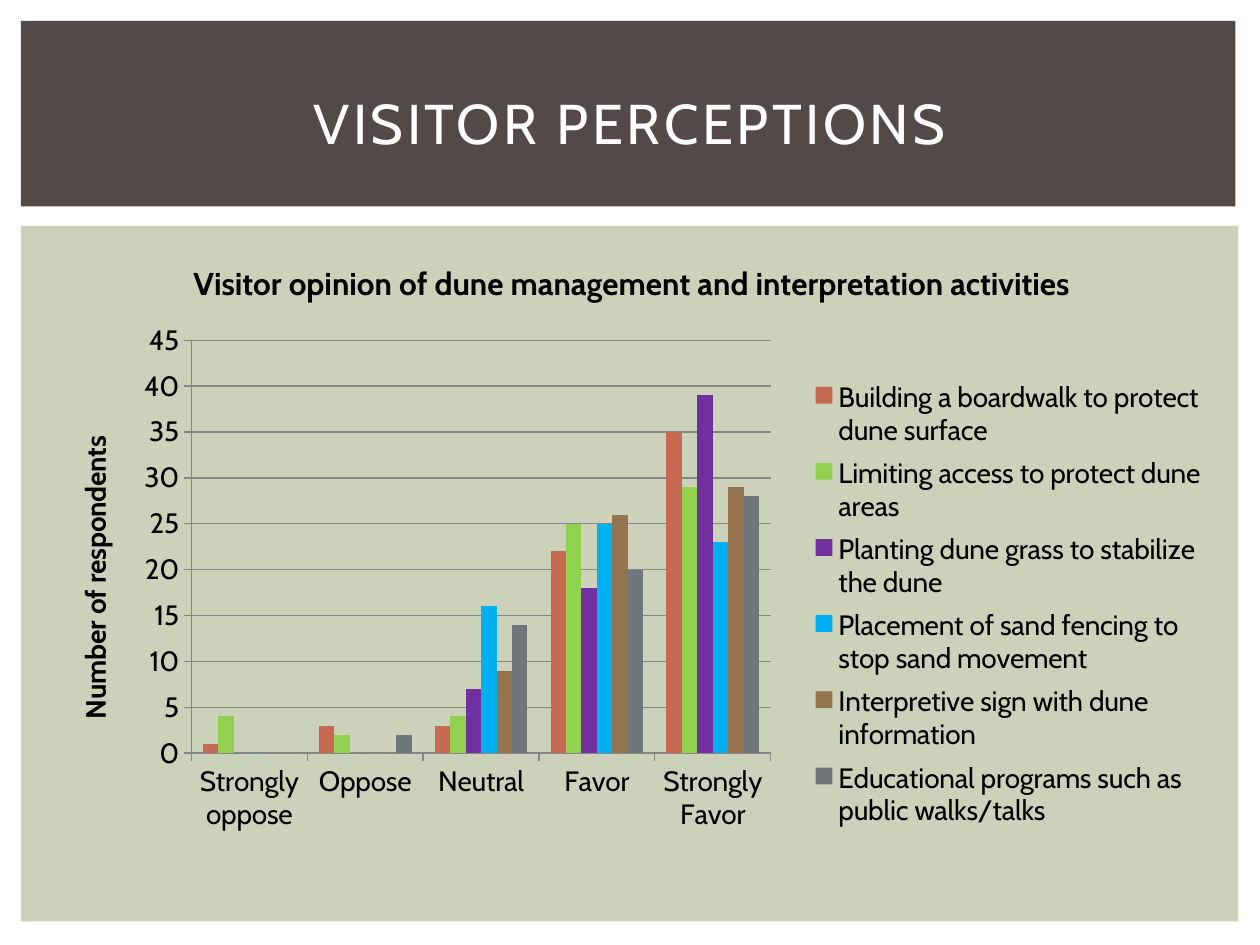
"""Build the visitor perceptions slide with its clustered column chart."""
from lxml.etree import SubElement as Sub
from pptx import Presentation
from pptx.chart.data import CategoryChartData as Data
from pptx.dml.color import RGBColor as Color
from pptx.enum.chart import XL_CHART_TYPE as Kind, XL_LEGEND_POSITION as Side, XL_TICK_MARK as Tick
from pptx.enum.shapes import MSO_SHAPE as Shape
from pptx.enum.text import MSO_ANCHOR as Anchor, PP_ALIGN as Align
from pptx.oxml.ns import qn
from pptx.util import Pt

FONT = "Cabin"
HUES = {"band": "534949", "panel": "CCD1B9", "white": "FFFFFF", "black": "000000", "grid": "868686"}
CATS = ["Strongly oppose", "Oppose", "Neutral", "Favor", "Strongly Favor"]
ROWS = [
    ("Building a boardwalk to protect dune surface", (1, 3, 3, 22, 35), "C66951"),
    ("Limiting access to protect dune areas", (4, 2, 4, 25, 29), "92D050"),
    ("Planting dune grass to stabilize the dune", (0, 0, 7, 18, 39), "7030A0"),
    ("Placement of sand fencing to stop sand movement", (0, 0, 16, 25, 23), "00B0F0"),
    ("Interpretive sign with dune information", (0, 0, 9, 26, 29), "94734E"),
    ("Educational programs such as public walks/talks", (0, 2, 14, 20, 28), "6F777D"),
]


def write(frame, text, size=16, bold=False, hue="black", space=0):
    para = frame.paragraphs[0]
    para.alignment = Align.CENTER
    run = para.add_run()
    run.text = text
    font = run.font
    font.name, font.size, font.bold = FONT, Pt(size), bold
    font.color.rgb = Color.from_string(HUES[hue])
    if space:
        run._r.get_or_add_rPr().set("spc", str(space * 100))


def place(node, index, **spots):
    for old in node.findall(qn("c:layout")):
        node.remove(old)
    lay = Sub(node, qn("c:layout"))
    node.insert(index, lay)
    man = Sub(lay, qn("c:manualLayout"))
    if index == 0:
        Sub(man, qn("c:layoutTarget")).set("val", "inner")
    for key in ("xMode", "yMode"):
        Sub(man, qn(f"c:{key}")).set("val", "edge")
    for key, val in spots.items():
        Sub(man, qn(f"c:{key}")).set("val", str(val))


deck = Presentation()
deck.slide_width, deck.slide_height = Pt(720), Pt(540)
slide = deck.slides.add_slide(deck.slide_layouts[6])

for hue, top, wide, high in (("panel", 129, 695.5, 397.5), ("band", 12, 694, 106)):
    rect = slide.shapes.add_shape(Shape.RECTANGLE, Pt(12), Pt(top), Pt(wide), Pt(high))
    rect.shadow.inherit = False
    rect.fill.solid()
    rect.fill.fore_color.rgb = Color.from_string(HUES[hue])
    rect.line.fill.background()

data = Data()
data.categories = CATS
for name, vals, _ in ROWS:
    data.add_series(name, vals)
chart = slide.shapes.add_chart(
    Kind.COLUMN_CLUSTERED, Pt(30), Pt(135.5), Pt(662), Pt(347), data).chart
chart.font.name, chart.font.size = FONT, Pt(16)
chart.font.color.rgb = Color.from_string(HUES["black"])
chart.has_title = True
write(chart.chart_title.text_frame, "Visitor opinion of dune management and interpretation activities",
      size=18, bold=True)
chart.chart_title.include_in_layout = False

plot = chart.plots[0]
plot.gap_width, plot.overlap = 150, 0
plot.vary_by_categories = False
for bars, (_, _, hue) in zip(plot.series, ROWS):
    bars.format.fill.solid()
    bars.format.fill.fore_color.rgb = Color.from_string(hue)

across, up = chart.category_axis, chart.value_axis
up.minimum_scale, up.maximum_scale, up.major_unit = 0, 45, 5
up.has_major_gridlines = True
write(up.axis_title.text_frame, "Number of respondents", bold=True)
for axis in (across, up):
    axis.major_tick_mark, axis.minor_tick_mark = Tick.OUTSIDE, Tick.NONE
    axis.tick_labels.font.size = Pt(16)
for part in (across, up, up.major_gridlines):
    part.format.line.color.rgb = Color.from_string(HUES["grid"])
    part.format.line.width = Pt(0.75)

chart.has_legend = True
key = chart.legend
key.position, key.include_in_layout = Side.RIGHT, False
key.font.name, key.font.size = FONT, Pt(16)
key.font.color.rgb = Color.from_string(HUES["black"])
place(chart._chartSpace.chart.plotArea, 0, x=0.12, y=0.17, w=0.5, h=0.68)
place(key._element, 1, x=0.65, y=0.22, w=0.35, h=0.77)

title = slide.shapes.add_textbox(Pt(30), Pt(28), Pt(660), Pt(83)).text_frame
title.word_wrap, title.vertical_anchor = True, Anchor.MIDDLE
write(title, "VISITOR PERCEPTIONS", size=32, hue="white", space=2)

deck.save("out.pptx")
